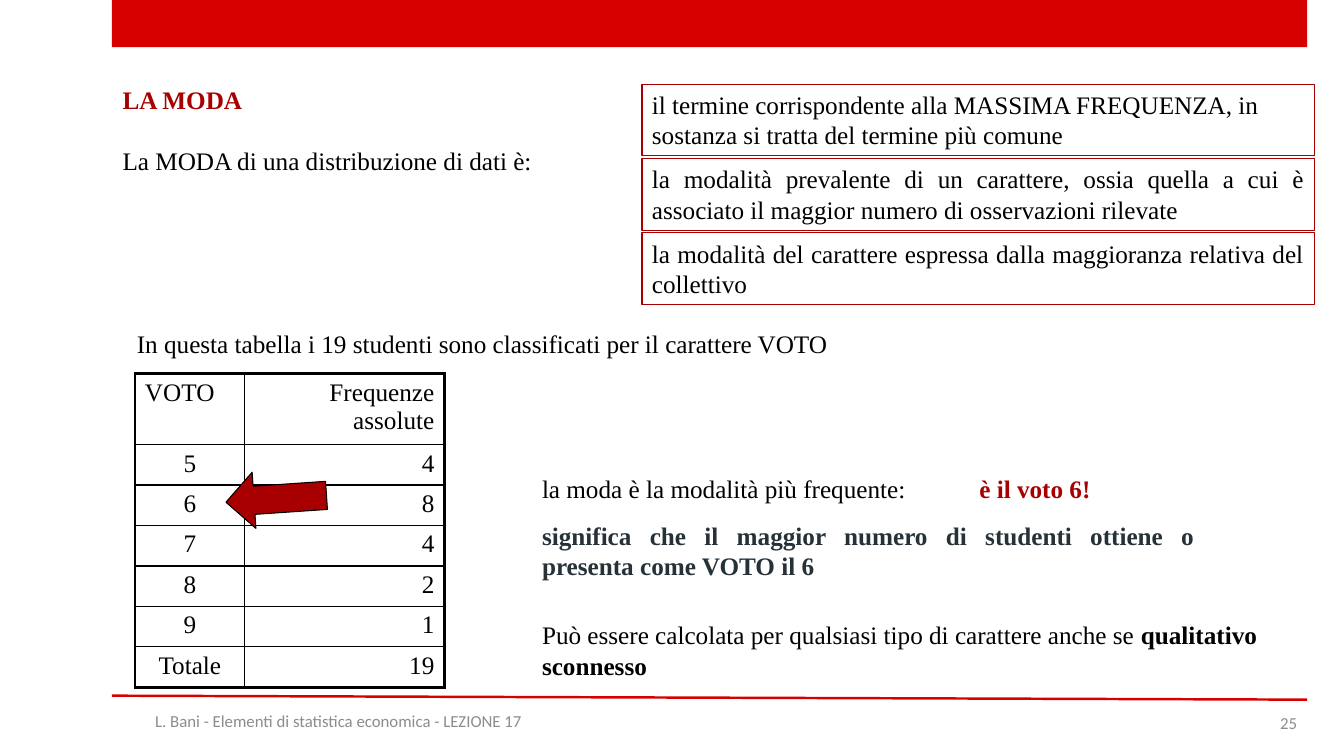
from dataclasses import dataclass

from lxml.etree import SubElement
from pptx import Presentation
from pptx.dml.color import RGBColor
from pptx.enum.shapes import MSO_CONNECTOR, MSO_SHAPE
from pptx.enum.text import MSO_ANCHOR, PP_ALIGN
from pptx.oxml.ns import qn
from pptx.util import Cm, Pt

# Content
DEFINITIONS = [
    ("il termine corrispondente alla MASSIMA FREQUENZA, in sostanza "
     "si tratta del termine più comune", PP_ALIGN.LEFT),
    ("la modalità prevalente di un carattere, ossia quella a cui è associato "
     "il maggior numero di osservazioni rilevate", PP_ALIGN.JUSTIFY),
    ("la modalità del carattere espressa dalla maggioranza relativa "
     "del collettivo", PP_ALIGN.JUSTIFY),
]
FREQUENCIES = [
    ("VOTO", "Frequenze assolute"),
    ("5", "4"),
    ("6", "8"),
    ("7", "4"),
    ("8", "2"),
    ("9", "1"),
    ("Totale", "19"),
]


@dataclass(frozen=True)
class Theme:
    serif: str = "Times New Roman"
    sans: str = "Calibri"
    body: int = 18
    small: int = 12
    black: str = "000000"
    white: str = "FFFFFF"
    band: str = "D60000"
    accent: str = "A80000"
    slate: str = "263238"
    gray: str = "8C8C8C"
    thin: float = 1
    thick: float = 2.25


THEME = Theme()


@dataclass(frozen=True)
class Style:
    color: str = THEME.black
    bold: bool = False
    font: str = THEME.serif
    size: int = THEME.body


PLAIN = Style()
STRONG = Style(bold=True)
RED = Style(THEME.accent, True)
SLATE = Style(THEME.slate, True)
FOOTER = Style(THEME.gray, False, THEME.sans, THEME.small)

# Each text: box in cm, runs, alignment, anchor, wrap
LEFT, MIDDLE, TOP = PP_ALIGN.LEFT, MSO_ANCHOR.MIDDLE, MSO_ANCHOR.TOP
TEXTS = [
    ((2.84, 1.96, 3.94, 1.07), [("LA MODA", RED)], LEFT, MIDDLE, True),
    ((2.84, 3.53, 10.97, 1.35),
     [("La MODA di una distribuzione di dati è:", PLAIN)], LEFT, TOP, True),
    ((3.2, 8.15, 18.26, 1.02),
     [("In questa tabella i 19 studenti sono classificati per il carattere VOTO",
       PLAIN)], LEFT, TOP, True),
    ((13.41, 11.79, 10.08, 1.02),
     [("la moda è la modalità più frequente:", PLAIN)], LEFT, TOP, False),
    ((24.43, 11.79, 3.35, 1.02), [("è il voto 6!", RED)], LEFT, TOP, False),
    ((13.41, 12.98, 16.94, 1.8),
     [("significa che il maggior numero di studenti ottiene o presenta "
       "come VOTO il 6", SLATE)], PP_ALIGN.JUSTIFY, TOP, True),
    ((13.41, 15.49, 18.97, 1.8),
     [("Può essere calcolata per qualsiasi tipo di carattere anche se ", PLAIN),
      ("qualitativo sconnesso", STRONG)], LEFT, TOP, True),
    ((2.82, 17.65, 11.43, 1.02),
     [("L. Bani - Elementi di statistica economica - LEZIONE 17", FOOTER)],
     PP_ALIGN.CENTER, MIDDLE, True),
    ((25.32, 17.7, 7.62, 1.02), [("25", FOOTER)], PP_ALIGN.RIGHT, MIDDLE, True),
]


def rgb(code):
    return RGBColor.from_string(code)


def write(frame, runs, align):
    paragraph = frame.paragraphs[0]
    paragraph.alignment = align
    for words, style in runs:
        run = paragraph.add_run()
        run.text = words
        run.font.name = style.font
        run.font.size = Pt(style.size)
        run.font.bold = style.bold
        run.font.color.rgb = rgb(style.color)


def add_block(slide, kind, box, fill=None, line=None):
    block = slide.shapes.add_shape(kind, *map(Cm, box))
    block.shadow.inherit = False
    if fill:
        block.fill.solid()
        block.fill.fore_color.rgb = rgb(fill)
    else:
        block.fill.background()
    if line:
        block.line.color.rgb = rgb(line)
        block.line.width = Pt(0.75)
    else:
        block.line.fill.background()
    return block


def add_borders(cell, widths):
    properties = cell._tc.get_or_add_tcPr()
    for index, (side, width) in enumerate(widths.items()):
        border = properties.makeelement(qn(f"a:{side}"), {"w": str(Pt(width))})
        fill = SubElement(border, qn("a:solidFill"))
        SubElement(fill, qn("a:srgbClr"), val=THEME.black)
        properties.insert(index, border)


def add_frequency_table(slide):
    widths, heights = [2.77, 5.03], [1.78] + [1.02] * 6
    table = slide.shapes.add_table(
        len(FREQUENCIES), 2, Cm(3.4), Cm(9.42),
        Cm(sum(widths)), Cm(sum(heights))).table
    for column, width in zip(table.columns, widths):
        column.width = Cm(width)
    last = len(FREQUENCIES) - 1
    for r, values in enumerate(FREQUENCIES):
        table.rows[r].height = Cm(heights[r])
        for c, value in enumerate(values):
            cell = table.cell(r, c)
            cell.fill.solid()
            cell.fill.fore_color.rgb = rgb(THEME.white)
            if c == 1:
                align = PP_ALIGN.RIGHT
            else:
                align = PP_ALIGN.CENTER if r else LEFT
            write(cell.text_frame, [(value, PLAIN)], align)
            outer = {"lnL": c == 0, "lnR": c == 1, "lnT": r == 0, "lnB": r == last}
            add_borders(cell, {side: THEME.thick if edge else THEME.thin
                               for side, edge in outer.items()})


def main():
    deck = Presentation()
    deck.slide_width, deck.slide_height = Cm(33.87), Cm(19.05)
    slide = deck.slides.add_slide(deck.slide_layouts[6])

    # Top band and footer rule
    add_block(slide, MSO_SHAPE.RECTANGLE, (2.82, 0, 30.12, 1.19), THEME.band)
    rule = slide.shapes.add_connector(
        MSO_CONNECTOR.STRAIGHT, Cm(2.82), Cm(17.53), Cm(32.94), Cm(17.63))
    rule.line.color.rgb = rgb(THEME.band)
    rule.line.width = Pt(1.75)
    SubElement(rule._element.spPr, qn("a:effectLst"))

    # Frequency table, with an arrow at the mode
    add_frequency_table(slide)
    arrow = add_block(slide, MSO_SHAPE.DOWN_ARROW, (6.25, 11.3, 1.42, 2.54),
                      THEME.accent, THEME.black)
    arrow.rotation = 86.1

    # Stacked definitions
    for index, (definition, align) in enumerate(DEFINITIONS):
        frame = add_block(slide, MSO_SHAPE.RECTANGLE,
                          (16.18, 2.13 + 1.87 * index, 16.94, 1.8),
                          line=THEME.accent).text_frame
        frame.word_wrap = True
        frame.vertical_anchor = TOP
        write(frame, [(definition, PLAIN)], align)

    # Heading, explanations and footer
    for box, runs, align, anchor, wrap in TEXTS:
        frame = slide.shapes.add_textbox(*map(Cm, box)).text_frame
        frame.word_wrap = wrap
        frame.vertical_anchor = anchor
        write(frame, runs, align)

    deck.save("out.pptx")


if __name__ == "__main__":
    main()
